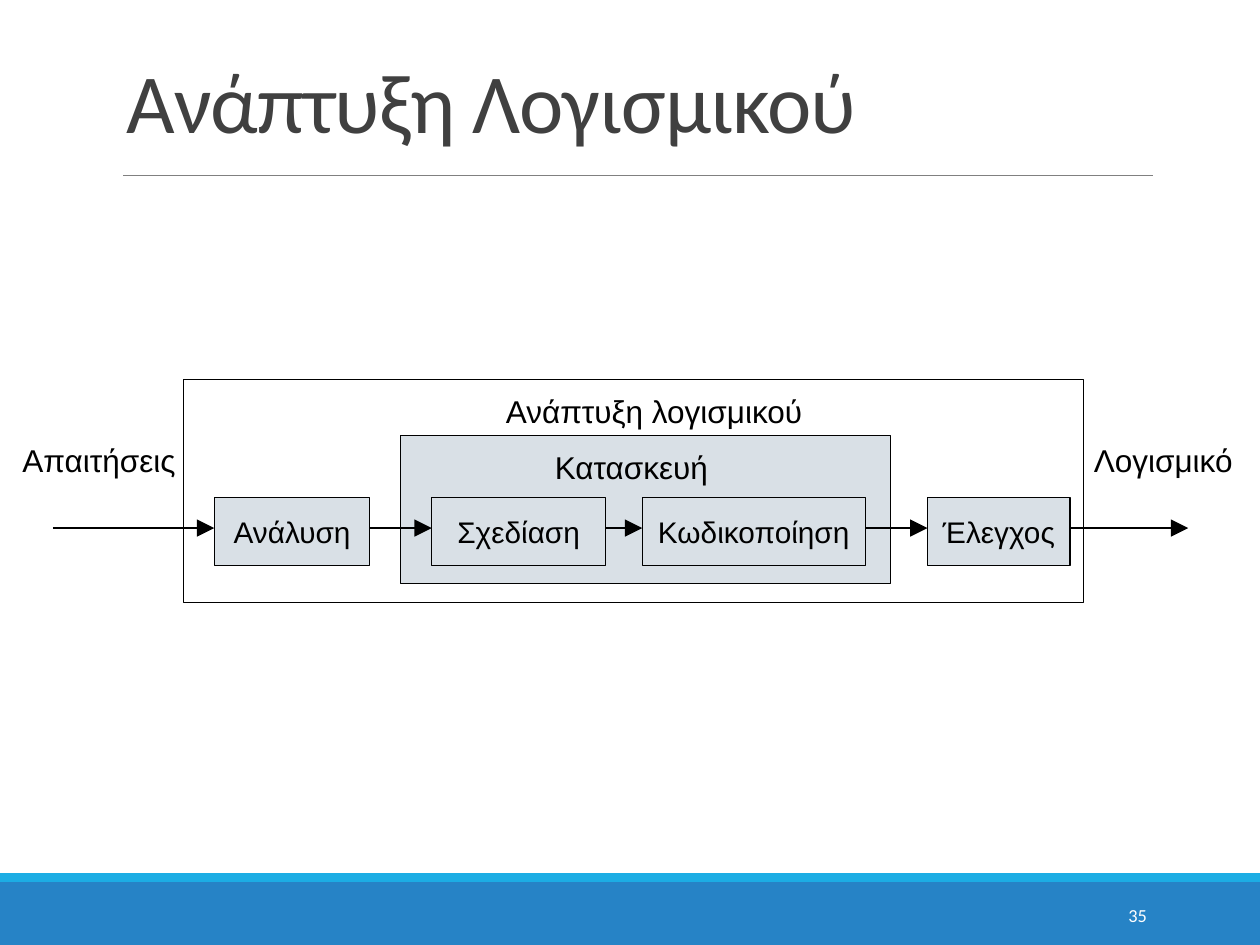
from dataclasses import dataclass

from lxml import etree
from pptx import Presentation
from pptx.dml.color import RGBColor
from pptx.enum import shapes, text
from pptx.oxml.ns import qn
from pptx.util import Pt


@dataclass(frozen=True)
class Theme:
    ink: str = "000000"
    grey: str = "404040"
    rule: str = "808080"
    panel: str = "D9E0E6"
    band: str = "2683C6"
    edge: str = "1CADE4"
    white: str = "FFFFFF"
    body: str = "Arial"
    head: str = "Calibri"
    title: float = 48
    label: float = 18
    step: float = 17
    page: float = 10.5
    thin: float = 0.5
    line: float = 0.75


class Deck:
    def __init__(self, theme, wide, high):
        self.theme = theme
        self.prs = Presentation()
        self.prs.slide_width, self.prs.slide_height = Pt(wide), Pt(high)
        self.slide = self.prs.slides.add_slide(self.prs.slide_layouts[5])

    def words(self, frame, words, size, color, font=None, align=None,
              anchor=text.MSO_ANCHOR.TOP, wrap=False):
        """Set one styled run in a text frame and return it."""
        frame.word_wrap = wrap
        frame.vertical_anchor = anchor
        para = frame.paragraphs[0]
        para.alignment = align or text.PP_ALIGN.LEFT
        run = para.add_run()
        run.text = words
        run.font.name = font or self.theme.body
        run.font.size = Pt(size)
        run.font.color.rgb = RGBColor.from_string(color)
        return run

    def title(self, words, left, top, wide, high):
        t = self.theme
        item = self.slide.shapes.title
        item.left, item.top, item.width, item.height = map(Pt, (left, top, wide, high))
        item.text_frame.auto_size = text.MSO_AUTO_SIZE.NONE
        run = self.words(item.text_frame, words, t.title, t.grey, t.head,
                         anchor=text.MSO_ANCHOR.BOTTOM, wrap=True)
        run.font._element.set("spc", "-50")
        item.text_frame.paragraphs[0].line_spacing = 0.85

    def box(self, left, top, wide, high, fill=None, line=None):
        item = self.slide.shapes.add_shape(
            shapes.MSO_SHAPE.RECTANGLE, *map(Pt, (left, top, wide, high)))
        item.shadow.inherit = False
        if fill:
            item.fill.solid()
            item.fill.fore_color.rgb = RGBColor.from_string(fill)
        else:
            item.fill.background()
        if line:
            item.line.color.rgb = RGBColor.from_string(line)
            item.line.width = Pt(self.theme.line)
        else:
            item.line.fill.background()
        return item

    def step(self, words, left, top, wide, high):
        t = self.theme
        item = self.box(left, top, wide, high, t.panel, t.ink)
        self.words(item.text_frame, words, t.step, t.ink,
                   align=text.PP_ALIGN.CENTER, anchor=text.MSO_ANCHOR.MIDDLE)

    def label(self, words, left, top, wide, high=28.8):
        item = self.slide.shapes.add_textbox(*map(Pt, (left, top, wide, high)))
        self.words(item.text_frame, words, self.theme.label, self.theme.ink)
        item.text_frame.auto_size = text.MSO_AUTO_SIZE.SHAPE_TO_FIT_TEXT

    def number(self, words, left, top, wide, high):
        t = self.theme
        item = self.slide.shapes.add_textbox(*map(Pt, (left, top, wide, high)))
        self.words(item.text_frame, words, t.page, t.white, t.head,
                   text.PP_ALIGN.RIGHT, text.MSO_ANCHOR.MIDDLE, True)

    def rule(self, start, end, y, color, width):
        item = self.slide.shapes.add_connector(
            shapes.MSO_CONNECTOR.STRAIGHT, *map(Pt, (start, y, end, y)))
        item.line.color.rgb = RGBColor.from_string(color)
        item.line.width = Pt(width)
        etree.SubElement(item._element.spPr, qn("a:effectLst"))
        return item

    def arrow(self, start, end, y):
        item = self.rule(start, end, y, self.theme.ink, self.theme.line)
        line = item._element.spPr.find(qn("a:ln"))
        etree.SubElement(line, qn("a:tailEnd"), type="triangle", w="lg", len="lg")


def main():
    t = Theme()
    deck = Deck(t, 720, 540)
    deck.box(0, 504, 720, 36, t.band)
    deck.box(0, 499, 720, 5, t.edge)
    deck.rule(70.5, 659, 100, t.rule, t.thin)
    deck.title("Ανάπτυξη Λογισμικού", 65, 22.5, 594, 67)
    deck.number("35", 584.5, 508.5, 78, 28.8)

    deck.box(105, 216.75, 514, 127.5, line=t.ink)
    deck.box(229, 248.75, 280, 84.75, t.panel, t.ink)

    steps = [
        ("Ανάλυση", 122.5, 88.75),
        ("Σχεδίαση", 246.75, 99.25),
        ("Κωδικοποίηση", 367, 127.5),
        ("Έλεγχος", 530, 81.5),
    ]
    for words, left, wide in steps:
        deck.step(words, left, 284.25, wide, 39)

    for words, left, top, wide in [
        ("Απαιτήσεις", 5.75, 248.5, 102),
        ("Ανάπτυξη λογισμικού", 282, 220.5, 184),
        ("Λογισμικό", 618, 248.5, 94),
        ("Κατασκευή", 310, 252.25, 102),
    ]:
        deck.label(words, left, top, wide)

    starts = [30.25] + [left + wide for _, left, wide in steps]
    ends = [left for _, left, _ in steps] + [679]
    for start, end in zip(starts, ends):
        deck.arrow(start, end, 301.75)

    deck.prs.save("out.pptx")


if __name__ == "__main__":
    main()
